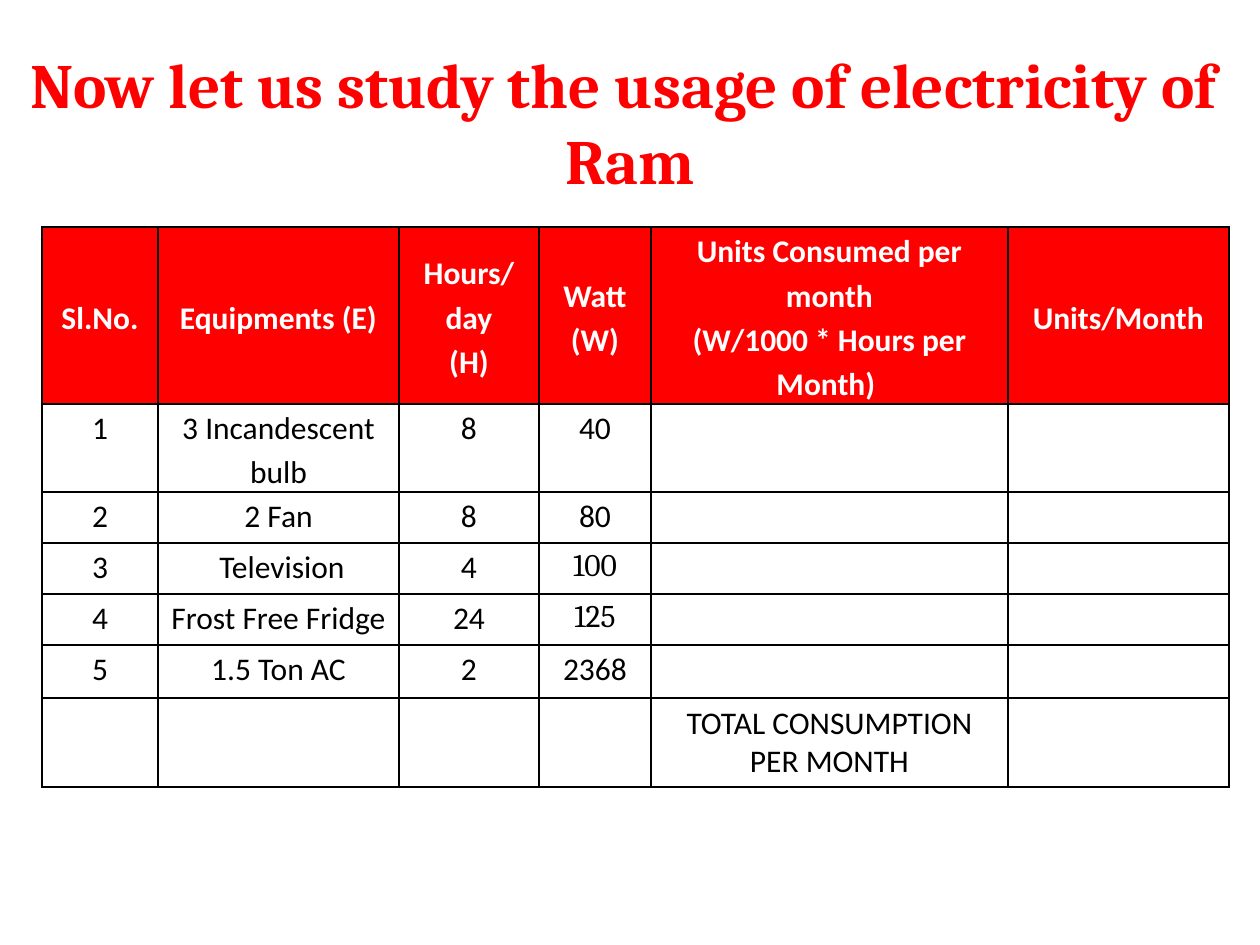
from lxml import etree
from pptx import Presentation
from pptx.dml.color import RGBColor
from pptx.enum.text import MSO_ANCHOR as ANCHOR, PP_ALIGN as ALIGN
from pptx.oxml.ns import qn
from pptx.util import Pt

PX = 914400 // 126
RED, WHITE, BLACK = "FF0000", "FFFFFF", "000000"


def write(tf, text, size=18, font="Calibri", color=BLACK, bold=False, spacing=None):
    """Fill a text frame; \\n starts a paragraph and \\v breaks a line."""
    tf.word_wrap = True
    for i, line in enumerate(text.split("\n")):
        p = tf.paragraphs[0] if i == 0 else tf.add_paragraph()
        p.text = line
        p.alignment = ALIGN.CENTER
        p.line_spacing = spacing
        for r in p.runs:
            r.font.size, r.font.name, r.font.bold = Pt(size), font, bold
            r.font.color.rgb = RGBColor.from_string(color)


def add_borders(cell, color=BLACK, width=1):
    tcPr = cell._tc.get_or_add_tcPr()
    for i, side in enumerate(("lnL", "lnR", "lnT", "lnB")):
        ln = etree.Element(qn(f"a:{side}"), w=str(Pt(width)))
        fill = etree.SubElement(ln, qn("a:solidFill"))
        etree.SubElement(fill, qn("a:srgbClr"), val=color)
        tcPr.insert(i, ln)


prs = Presentation()
prs.slide_width, prs.slide_height = 1260 * PX, 945 * PX
s = prs.slides.add_slide(prs.slide_layouts[6])

title = s.shapes.add_textbox(-21 * PX, 32 * PX, 1302 * PX, 179 * PX)
title.text_frame.vertical_anchor = ANCHOR.MIDDLE
write(title.text_frame, "Now let us study the usage of electricity of \vRam",
      size=36, font="Cambria", color=RED, bold=True)

col_widths = [116, 241, 140, 112, 357, 221]
row_heights = [177, 88, 51, 51, 51, 53, 89]
rows = [
    ["Sl.No.", "Equipments (E)", "Hours/ day\n(H)", "Watt (W)",
     "Units Consumed per month\n(W/1000 * Hours per Month) ", "Units/Month"],
    ["1", "3 Incandescent bulb", "8", "40", "", ""],
    ["2", "2 Fan", "8", "80", "", ""],
    ["3", " Television", "4", "100", "", ""],
    ["4", "Frost Free Fridge", "24", "125", "", ""],
    ["5", "1.5 Ton AC", "2", "2368", "", ""],
    ["", "", "", "", "TOTAL CONSUMPTION PER MONTH", ""],
]
total_row = len(rows) - 1

table = s.shapes.add_table(len(rows), len(col_widths), 42 * PX, 227 * PX,
                           sum(col_widths) * PX, sum(row_heights) * PX).table
table.first_row = table.horz_banding = False
for column, width in zip(table.columns, col_widths):
    column.width = width * PX
for row, height in zip(table.rows, row_heights):
    row.height = height * PX

for i, texts in enumerate(rows):
    for j, text in enumerate(texts):
        cell = table.cell(i, j)
        header = i == 0
        if header:
            cell.fill.solid()
            cell.fill.fore_color.rgb = RGBColor.from_string(RED)
            cell.vertical_anchor = ANCHOR.MIDDLE
        else:
            cell.fill.background()
        add_borders(cell)
        if not text:
            continue
        if i < total_row:
            cell.margin_left = cell.margin_right = 9 * PX
            cell.margin_top = cell.margin_bottom = 0
        write(cell.text_frame, text, bold=header,
              color=WHITE if header else BLACK,
              font="Cambria" if text in ("100", "125") else "Calibri",
              spacing=1.15 if i < total_row else None)

prs.save("out.pptx")
